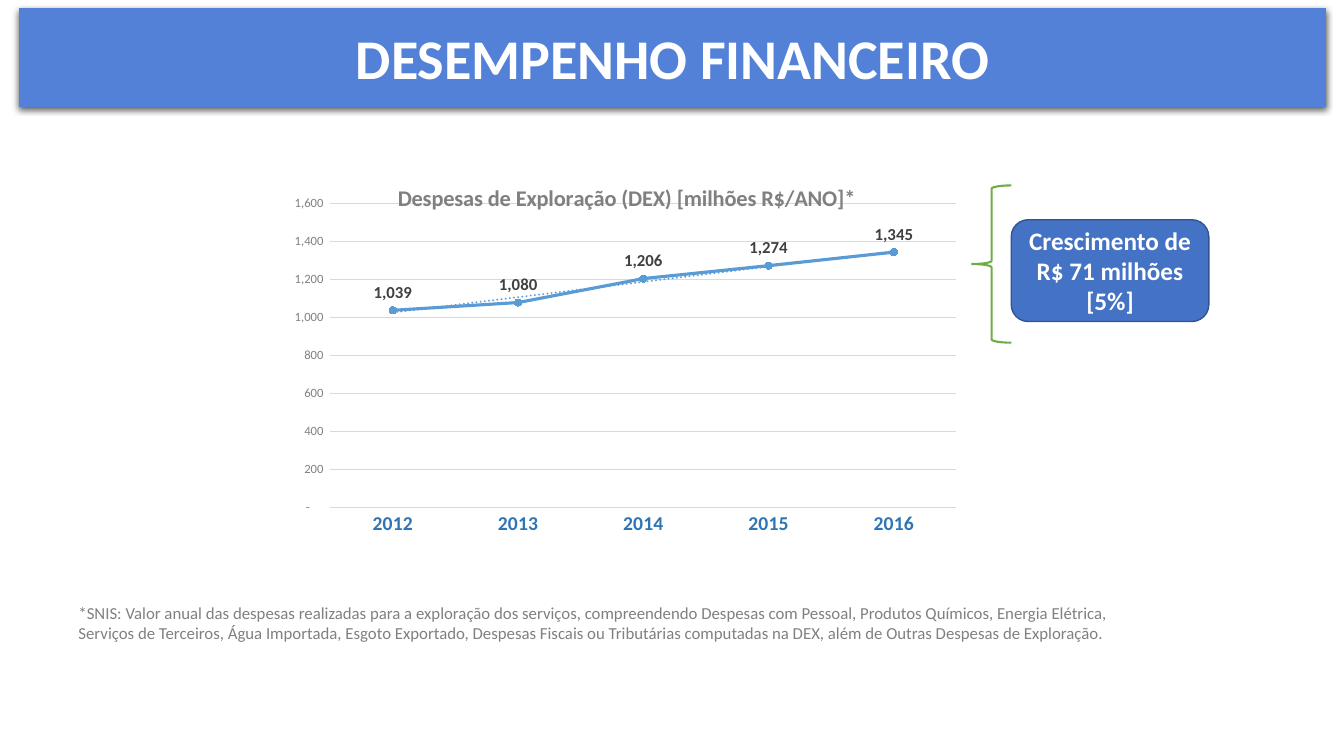
from lxml import etree
from pptx import Presentation
from pptx import util as u
from pptx.chart.data import CategoryChartData
from pptx.dml.color import RGBColor
from pptx.enum import chart as ch
from pptx.enum import shapes, text
from pptx.oxml import parse_xml
from pptx.oxml.ns import nsdecls, qn

WHITE = RGBColor(0xFF, 0xFF, 0xFF)
GRAY = RGBColor(0x80, 0x80, 0x80)
DARK = RGBColor(0x40, 0x40, 0x40)
GRID = RGBColor(0xD9, 0xD9, 0xD9)
BANNER = RGBColor(0x53, 0x81, 0xD7)
CALLOUT = RGBColor(0x44, 0x72, 0xC4)
CALLOUT_EDGE = RGBColor(0x32, 0x54, 0x91)
BRACE = RGBColor(0x70, 0xAD, 0x47)
SERIES = RGBColor(0x5B, 0x9B, 0xD5)
YEAR = RGBColor(0x2E, 0x75, 0xB6)
FONT = "Calibri"

TITLE = "DESEMPENHO FINANCEIRO"
CHART_TITLE = "Despesas de Exploração (DEX) [milhões R$/ANO]*"
EXPENSES = {"2012": 1039, "2013": 1080, "2014": 1206, "2015": 1274, "2016": 1345}
GROWTH = ["Crescimento de", "R$ 71 milhões", "[5%]"]
FOOTNOTE = [
    "*SNIS: Valor anual das despesas realizadas para a exploração dos serviços, "
    "compreendendo Despesas com Pessoal, Produtos Químicos, Energia Elétrica,",
    "Serviços de Terceiros, Água Importada, Esgoto Exportado, Despesas Fiscais ou "
    "Tributárias computadas na DEX, além de Outras Despesas de Exploração.",
]
AXIS_FORMAT = '_-* #,##0_-;\\-* #,##0_-;_-* "-"??_-;_-@_'

BANNER_AT = (0.19, 0.08, 12.96, 0.98)
CHART_AT = (2.73, 1.61, 6.91, 4.16)
CALLOUT_AT = (10.03, 2.18, 1.96, 1.01)
BRACE_AT = (9.64, 1.84, 0.39, 1.56)
FOOTNOTE_AT = (0.68, 5.93, 10.57, 0.5)


def inches(place):
    return [u.Inches(length) for length in place]


def set_font(font, size, color, bold=False):
    font.name = FONT
    font.size = u.Pt(size)
    font.bold = bold
    font.color.rgb = color


def write(frame, lines, size, color, bold=False, align=text.PP_ALIGN.LEFT,
          anchor=text.MSO_ANCHOR.TOP, wrap=True, fit=text.MSO_AUTO_SIZE.NONE):
    frame.word_wrap = wrap
    frame.auto_size = fit
    frame.vertical_anchor = anchor
    for number, line in enumerate(lines):
        para = frame.paragraphs[0] if number == 0 else frame.add_paragraph()
        para.alignment = align
        span = para.add_run()
        span.text = line
        set_font(span.font, size, color, bold)


def manual_layout(target, **values):
    parts = "".join(f'<c:{key} val="{value}"/>' for key, value in values.items())
    layout = parse_xml(f'<c:layout {nsdecls("c")}><c:manualLayout>{parts}'
                       '</c:manualLayout></c:layout>')
    old = target.find(qn("c:layout"))
    if old is not None:
        target.remove(old)
    after = target.find(qn("c:tx"))
    target.insert(0 if after is None else target.index(after) + 1, layout)


def add_banner(page):
    banner = page.shapes.title
    banner.left, banner.top, banner.width, banner.height = inches(BANNER_AT)
    banner.fill.solid()
    banner.fill.fore_color.rgb = BANNER
    outline = parse_xml(f'<a:prstGeom {nsdecls("a")} prst="roundRect"><a:avLst/></a:prstGeom>')
    banner.element.spPr.find(qn("a:xfrm")).addnext(outline)
    banner.element.spPr.append(parse_xml(
        f'<a:effectLst {nsdecls("a")}><a:outerShdw blurRad="{u.Pt(4.5)}" dist="{u.Pt(1.5)}" '
        'dir="5400000" algn="ctr" rotWithShape="0"><a:srgbClr val="000000">'
        '<a:alpha val="63000"/></a:srgbClr></a:outerShdw></a:effectLst>'))
    write(banner.text_frame, [TITLE], 40, WHITE, bold=True, align=text.PP_ALIGN.CENTER,
          anchor=text.MSO_ANCHOR.MIDDLE)


def add_expenses(page):
    data = CategoryChartData(number_format="#,##0")
    data.categories = list(EXPENSES)
    data.add_series("DEX", list(EXPENSES.values()))
    chart = page.shapes.add_chart(ch.XL_CHART_TYPE.LINE_MARKERS, *inches(CHART_AT), data).chart
    set_font(chart.font, 10, GRAY)
    chart.has_legend = False
    write(chart.chart_title.text_frame, [CHART_TITLE], 16, GRAY, bold=True,
          align=text.PP_ALIGN.CENTER)
    chart.chart_title.include_in_layout = True
    title = chart.chart_title._element
    title.find(qn("c:overlay")).set("val", "1")
    manual_layout(title, xMode="edge", yMode="edge", x=0.17, y=0.04)
    plot_area = chart._chartSpace.chart.plotArea
    manual_layout(plot_area, layoutTarget="inner", xMode="edge", yMode="edge",
                  x=0.079, y=0.099, w=0.899, h=0.725)

    years, values = chart.category_axis, chart.value_axis
    for axis in (years, values):
        axis.major_tick_mark = axis.minor_tick_mark = ch.XL_TICK_MARK.NONE
    set_font(years.tick_labels.font, 14, YEAR, bold=True)
    years.format.line.color.rgb = GRID
    years.format.line.width = u.Pt(0.75)
    set_font(values.tick_labels.font, 9, GRAY)
    values.tick_labels.number_format = AXIS_FORMAT
    values.tick_labels.number_format_is_linked = False
    values.format.line.fill.background()
    values.minimum_scale, values.maximum_scale, values.major_unit = 0, 1600, 200
    values.major_gridlines.format.line.color.rgb = GRID
    values.major_gridlines.format.line.width = u.Pt(0.75)

    chart.plots[0].vary_by_categories = False
    series = chart.plots[0].series[0]
    series.smooth = False
    series.format.line.color.rgb = SERIES
    series.format.line.width = u.Pt(2.25)
    series.marker.style = ch.XL_MARKER_STYLE.CIRCLE
    series.marker.size = 5
    series.marker.format.fill.solid()
    series.marker.format.fill.fore_color.rgb = SERIES
    series.marker.format.line.color.rgb = SERIES
    labels = series.data_labels
    labels.show_value = True
    labels.position = ch.XL_LABEL_POSITION.ABOVE
    labels.number_format = "#,##0"
    labels.number_format_is_linked = False
    set_font(labels.font, 12, DARK, bold=True)
    series._element.find(qn("c:cat")).addprevious(parse_xml(
        f'<c:trendline {nsdecls("c", "a")}><c:spPr><a:ln w="{u.Pt(1.5)}" cap="rnd"><a:solidFill>'
        f'<a:srgbClr val="{SERIES}"/></a:solidFill><a:prstDash val="sysDot"/></a:ln></c:spPr>'
        '<c:trendlineType val="linear"/><c:dispRSqr val="0"/><c:dispEq val="0"/></c:trendline>'))


def add_growth(page):
    callout = page.shapes.add_shape(shapes.MSO_SHAPE.ROUNDED_RECTANGLE, *inches(CALLOUT_AT))
    callout.shadow.inherit = False
    callout.fill.solid()
    callout.fill.fore_color.rgb = CALLOUT
    callout.line.color.rgb = CALLOUT_EDGE
    callout.line.width = u.Pt(1)
    write(callout.text_frame, GROWTH, 18, WHITE, bold=True, align=text.PP_ALIGN.CENTER,
          anchor=text.MSO_ANCHOR.MIDDLE)
    brace = page.shapes.add_shape(shapes.MSO_SHAPE.LEFT_BRACE, *inches(BRACE_AT))
    brace.shadow.inherit = False
    brace.fill.background()
    brace.line.color.rgb = BRACE
    brace.line.width = u.Pt(1.5)


def main():
    deck = Presentation()
    deck.slide_width, deck.slide_height = u.Inches(13.33), u.Inches(7.5)
    page = deck.slides.add_slide(deck.slide_layouts.get_by_name("Title Only"))
    add_banner(page)
    add_expenses(page)
    add_growth(page)
    footnote = page.shapes.add_textbox(*inches(FOOTNOTE_AT))
    write(footnote.text_frame, FOOTNOTE, 12, GRAY, wrap=False,
          fit=text.MSO_AUTO_SIZE.SHAPE_TO_FIT_TEXT)
    deck.save("out.pptx")


if __name__ == "__main__":
    main()
